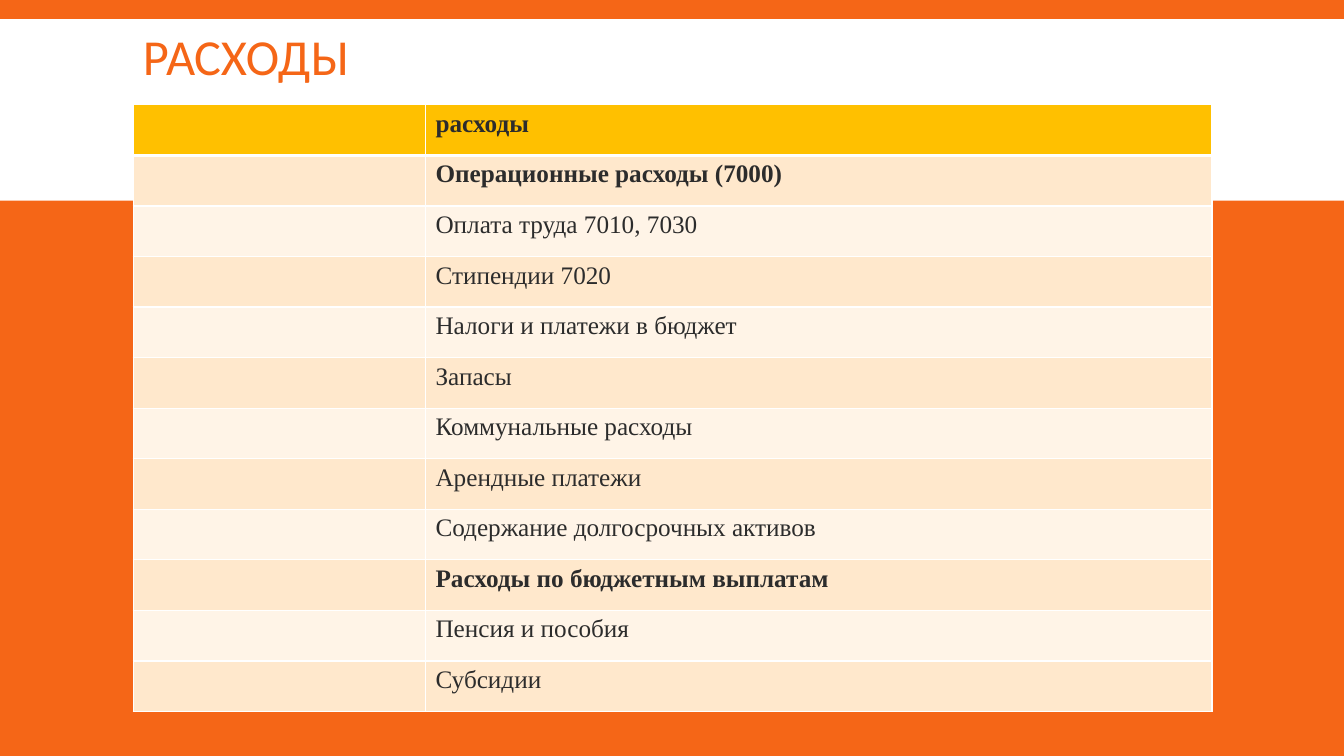
from lxml import etree
from pptx import Presentation
from pptx.dml.color import RGBColor
from pptx.enum import shapes, text
from pptx.oxml import ns
from pptx.util import Inches, Pt

ORANGE = RGBColor(0xF5, 0x66, 0x17)
WHITE = RGBColor(0xFF, 0xFF, 0xFF)
AMBER = RGBColor(0xFF, 0xC0, 0x00)
PEACH = RGBColor(0xFF, 0xE8, 0xCC)
CREAM = RGBColor(0xFF, 0xF4, 0xE7)
DARK = RGBColor(0x2C, 0x2C, 0x2C)

LEFT, WIDTH = 1.32, 10.7
COLUMNS = [2.9, 7.8]
TABLE_TOP, TABLE_HEIGHT = 1.04, 6.02
EXPENSES = [
    "расходы",
    "Операционные расходы (7000)",
    "Оплата труда 7010, 7030",
    "Стипендии 7020",
    "Налоги и платежи в бюджет",
    "Запасы",
    "Коммунальные расходы",
    "Арендные платежи",
    "Содержание долгосрочных активов",
    "Расходы по бюджетным выплатам",
    "Пенсия и пособия",
    "Субсидии",
]
BOLD_ROWS = {0, 1, 9}


def add_band(page):
    band = page.shapes.add_shape(
        shapes.MSO_SHAPE.RECTANGLE, 0, Inches(0.19), Inches(13.33), Inches(1.8)
    )
    band.shadow.inherit = False
    band.fill.solid()
    band.fill.fore_color.rgb = WHITE
    band.line.fill.background()


def style_text(para, font_name, size, color, bold=False):
    font = para.runs[0].font
    font.name = font_name
    font.size = Pt(size)
    font.color.rgb = color
    font.bold = bold


def add_title(page, wording):
    box = page.shapes.add_textbox(
        Inches(LEFT), Inches(0.31), Inches(WIDTH), Inches(0.58)
    )
    frame = box.text_frame
    frame.word_wrap = True
    frame.vertical_anchor = text.MSO_ANCHOR.MIDDLE
    frame.text = wording
    para = frame.paragraphs[0]
    para.line_spacing = 0.85
    style_text(para, "Calibri", 36, ORANGE)


def set_borders(cell, top, bottom):
    properties = cell._tc.get_or_add_tcPr()
    widths = {"lnL": 1, "lnR": 1, "lnT": top, "lnB": bottom}
    for position, (side, width) in enumerate(widths.items()):
        line = etree.Element(ns.qn(f"a:{side}"), w=str(Pt(width)))
        fill = etree.SubElement(line, ns.qn("a:solidFill"))
        etree.SubElement(fill, ns.qn("a:srgbClr"), val=str(WHITE))
        properties.insert(position, line)


def row_fill(index):
    if index == 0:
        return AMBER
    return PEACH if index % 2 else CREAM


def add_expense_table(page):
    table = page.shapes.add_table(
        len(EXPENSES), len(COLUMNS), Inches(LEFT), Inches(TABLE_TOP),
        Inches(WIDTH), Inches(TABLE_HEIGHT),
    ).table
    for column, width in zip(table.columns, COLUMNS):
        column.width = Inches(width)
    for index, expense in enumerate(EXPENSES):
        for cell in table.rows[index].cells:
            cell.fill.solid()
            cell.fill.fore_color.rgb = row_fill(index)
            set_borders(cell, 3 if index == 1 else 1, 3 if index == 0 else 1)
        label = table.cell(index, 1).text_frame
        label.text = expense
        style_text(
            label.paragraphs[0], "Times New Roman", 18, DARK, index in BOLD_ROWS
        )


def main():
    deck = Presentation()
    deck.slide_width = Inches(13.33)
    deck.slide_height = Inches(7.5)
    page = deck.slides.add_slide(deck.slide_layouts[6])
    page.background.fill.solid()
    page.background.fill.fore_color.rgb = ORANGE
    add_band(page)
    add_title(page, "РАСХОДЫ")
    add_expense_table(page)
    deck.save("out.pptx")


if __name__ == "__main__":
    main()
